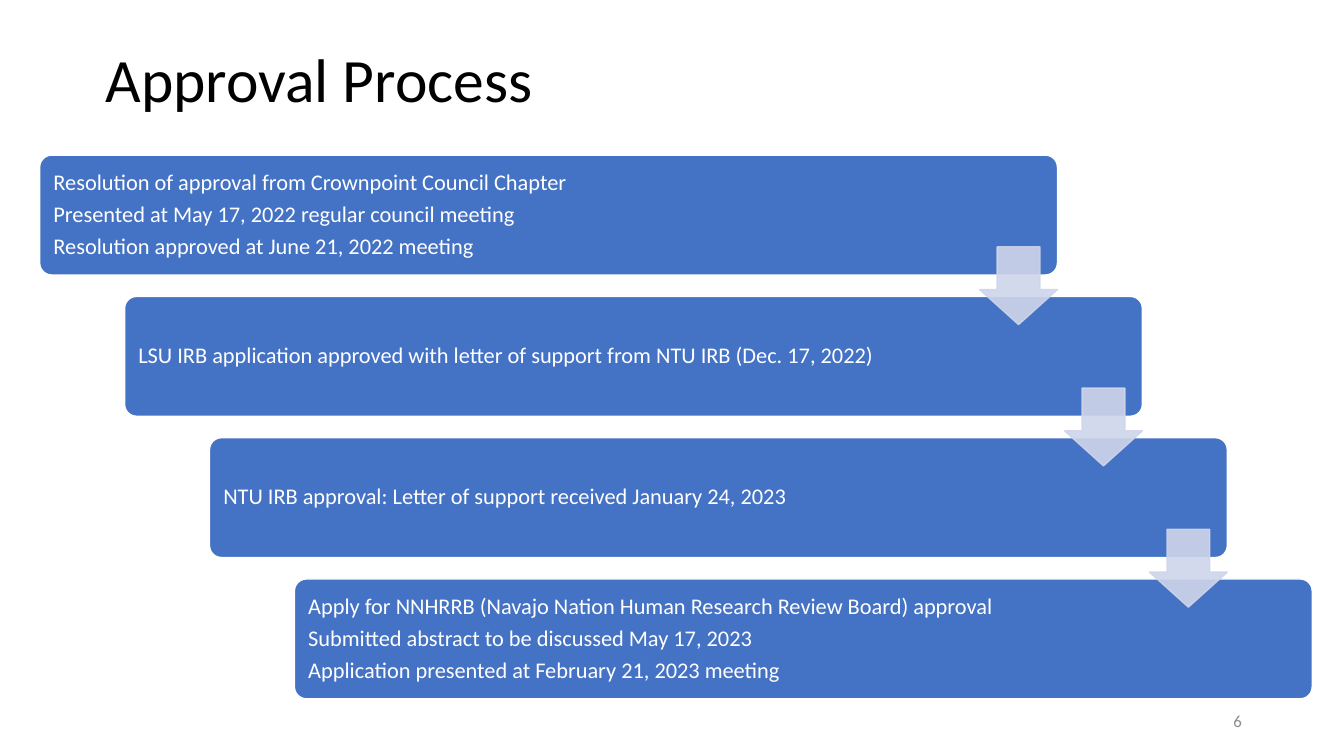
from lxml.etree import SubElement
from pptx import Presentation
from pptx.dml.color import RGBColor
from pptx.enum.shapes import MSO_SHAPE
from pptx.enum.text import MSO_ANCHOR, PP_ALIGN
from pptx.oxml.ns import qn
from pptx.util import Cm, Pt

BLACK = RGBColor(0x00, 0x00, 0x00)
WHITE = RGBColor(0xFF, 0xFF, 0xFF)
BLUE = RGBColor(0x44, 0x72, 0xC4)
PALE_BLUE = RGBColor(0xCF, 0xD5, 0xEA)
GREY = RGBColor(0x8C, 0x8C, 0x8C)

STEPS = [
    ["Resolution of approval from Crownpoint Council Chapter",
     "Presented at May 17, 2022 regular council meeting",
     "Resolution approved at June 21, 2022 meeting"],
    ["LSU IRB application approved with letter of support from NTU IRB (Dec. 17, 2022)"],
    ["NTU IRB approval: Letter of support received January 24, 2023"],
    ["Apply for NNHRRB (Navajo Nation Human Research Review Board) approval",
     "Submitted abstract to be discussed May 17, 2023",
     "Application presented at February 21, 2023 meeting"],
]


def write_lines(shape, lines, size, color, alignment=PP_ALIGN.LEFT, spacing=1.0, after=0):
    """Fill a shape with vertically centred paragraphs of one style."""
    frame = shape.text_frame
    frame.word_wrap = True
    frame.vertical_anchor = MSO_ANCHOR.MIDDLE
    frame.text = "\n".join(lines)
    for paragraph in frame.paragraphs:
        paragraph.alignment = alignment
        paragraph.line_spacing = spacing
        paragraph.space_after = Pt(after)
        paragraph.font.name = "Calibri"
        paragraph.font.size = Pt(size)
        paragraph.font.color.rgb = color


def add_block(slide, preset, box, adjustments, fill, line):
    """Add a filled, outlined preset shape without a shadow."""
    shape = slide.shapes.add_shape(preset, *box)
    shape.shadow.inherit = False
    for index, value in enumerate(adjustments):
        shape.adjustments[index] = value
    shape.fill.solid()
    shape.fill.fore_color.rgb = fill
    shape.line.color.rgb = line
    shape.line.width = Pt(1)
    return shape


def add_title(slide, left, top, width, height):
    """Place the slide heading."""
    title = slide.shapes.add_textbox(left, top, width, height)
    write_lines(title, ["Approval Process"], 44, BLACK, spacing=0.9)


def add_arrow(slide, left, top, size):
    """Place a slightly transparent arrow pointing to the next step."""
    arrow = add_block(slide, MSO_SHAPE.DOWN_ARROW, (left, top, size, size),
                      (0.55, 0.45), PALE_BLUE, PALE_BLUE)
    properties = arrow._element.spPr
    for color in properties.iter(qn("a:srgbClr")):
        SubElement(color, qn("a:alpha"), val="90000")


def add_staircase(slide, left, top, width, height):
    """Place the steps as a descending staircase joined by arrows."""
    step_width, step_height, arrow_size = Cm(25.65), Cm(3.02), Cm(1.96)
    shift = (width - step_width) // (len(STEPS) - 1)
    pitch = (height - step_height) // (len(STEPS) - 1)
    for index, lines in enumerate(STEPS):
        box = (left + index * shift, top + index * pitch, step_width, step_height)
        step = add_block(slide, MSO_SHAPE.ROUNDED_RECTANGLE, box, (0.1,), BLUE, WHITE)
        write_lines(step, lines, 16, WHITE, spacing=0.9, after=5.6)
        step.text_frame.margin_left = Cm(0.26)
    for index in range(len(STEPS) - 1):
        gap_middle = top + index * pitch + (step_height + pitch) // 2
        add_arrow(slide, left + index * shift + step_width - arrow_size,
                  gap_middle - arrow_size // 2, arrow_size)


def add_slide_number(slide, left, top, width, height):
    """Place the page number at the bottom right."""
    number = slide.shapes.add_textbox(left, top, width, height)
    write_lines(number, ["6"], 12, GREY, PP_ALIGN.RIGHT)


def main():
    """Build and save the slide."""
    presentation = Presentation()
    presentation.slide_width = Cm(33.87)
    presentation.slide_height = Cm(19.05)
    slide = presentation.slides.add_slide(presentation.slide_layouts[6])
    add_title(slide, Cm(2.41), Cm(0.23), Cm(29.21), Cm(3.68))
    add_staircase(slide, Cm(1), Cm(3.91), Cm(32.07), Cm(13.7))
    add_slide_number(slide, Cm(23.93), Cm(17.65), Cm(7.62), Cm(1.02))
    presentation.save("out.pptx")


if __name__ == "__main__":
    main()
